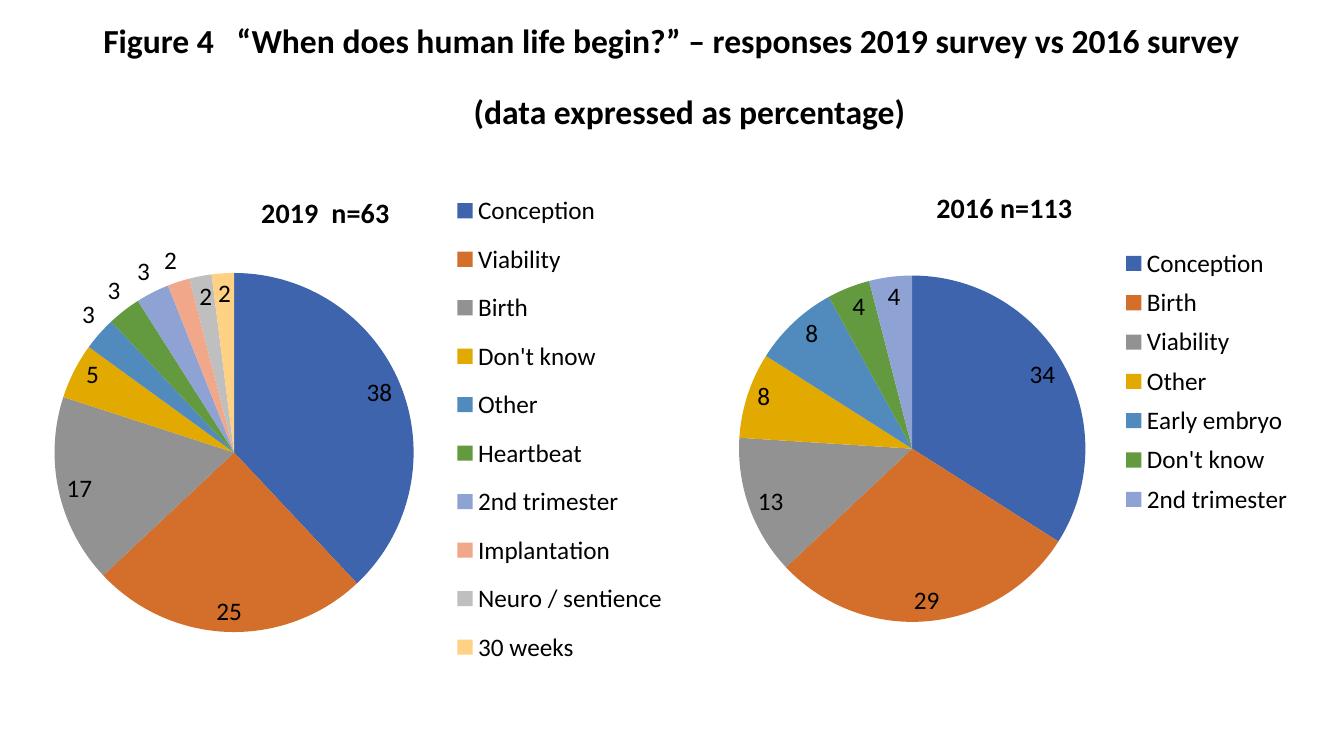
from lxml.etree import SubElement
from pptx import Presentation
from pptx.chart.data import CategoryChartData
from pptx.dml.color import RGBColor
from pptx.enum.chart import XL_CHART_TYPE, XL_LABEL_POSITION, XL_LEGEND_POSITION
from pptx.enum.text import MSO_ANCHOR, PP_ALIGN
from pptx.oxml.ns import qn
from pptx.util import Emu, Pt

COLORS = {
    "text": "000000",
    "blue": "3D64AC",
    "orange": "D36F2B",
    "gray": "929292",
    "gold": "E2AA00",
    "sky": "518BBE",
    "green": "639A3F",
    "lavender": "8FA2D4",
    "salmon": "F1A78A",
    "silver": "BFBFBF",
    "peach": "FFD184",
}
SLICES = ["blue", "orange", "gray", "gold", "sky", "green",
          "lavender", "salmon", "silver", "peach"]
EMU_PER_PX = 12192000 / 1344

RESPONSES_2019 = {
    "Conception": 38, "Viability": 25, "Birth": 17, "Don't know": 5, "Other": 3,
    "Heartbeat": 3, "2nd trimester": 3, "Implantation": 2,
    "Neuro / sentience": 2, "30 weeks": 2,
}
RESPONSES_2016 = {
    "Conception": 34, "Birth": 29, "Viability": 13, "Other": 8,
    "Early embryo": 8, "Don't know": 4, "2nd trimester": 4,
}


def px(length):
    return Emu(round(length * EMU_PER_PX))


def place(element, index, inner=False, **fractions):
    """Give a chart part a manual layout in fractions of the chart area."""
    for old_layout in element.findall(qn("c:layout")):
        element.remove(old_layout)
    layout = SubElement(element, qn("c:layout"))
    element.insert(index, layout)
    manual = SubElement(layout, qn("c:manualLayout"))
    settings = {"layoutTarget": "inner"} if inner else {}
    settings.update(xMode="edge", yMode="edge", **fractions)
    for name, value in settings.items():
        SubElement(manual, qn(f"c:{name}")).set("val", str(value))


class SurveySlide:
    """Holds the slide and its text style."""

    def __init__(self, presentation, font_name="Calibri"):
        self.slide = presentation.slides.add_slide(presentation.slide_layouts[6])
        self.font_name = font_name

    def style(self, font, size, bold=False):
        font.name = self.font_name
        font.size = Pt(size)
        font.bold = bold
        font.color.rgb = RGBColor.from_string(COLORS["text"])

    def heading(self, box, lines, gap, indent):
        """Centre the lines in the box, with later lines indented."""
        shape = self.slide.shapes.add_textbox(*map(px, box))
        frame = shape.text_frame
        frame.word_wrap = True
        frame.vertical_anchor = MSO_ANCHOR.MIDDLE
        for index, line in enumerate(lines):
            paragraph = frame.add_paragraph() if index else frame.paragraphs[0]
            paragraph.text = line
            paragraph.alignment = PP_ALIGN.CENTER
            paragraph.line_spacing = 0.9
            self.style(paragraph.font, 24, bold=True)
            if index:
                paragraph.space_before = Pt(gap)
                paragraph._p.get_or_add_pPr().set("marL", str(px(indent)))

    def pie(self, box, title, responses, plot, legend, title_place=None):
        data = CategoryChartData()
        data.categories = list(responses)
        data.add_series(title, list(responses.values()))
        chart = self.slide.shapes.add_chart(
            XL_CHART_TYPE.PIE, *map(px, box), data).chart
        self.style(chart.font, 18)

        chart.has_title = True
        paragraph = chart.chart_title.text_frame.paragraphs[0]
        paragraph.text = title
        self.style(paragraph.font, 20, bold=True)
        if title_place:
            place(chart.chart_title._element, 1, **title_place)

        chart.has_legend = True
        chart.legend.position = XL_LEGEND_POSITION.RIGHT
        chart.legend.include_in_layout = False
        place(chart.legend._element, 1, **legend)
        place(chart._chartSpace.chart.plotArea, 0, inner=True, **plot)

        pie_plot = chart.plots[0]
        pie_plot.vary_by_categories = True
        for index, color in enumerate(SLICES[:len(responses)]):
            fill = pie_plot.series[0].points[index].format.fill
            fill.solid()
            fill.fore_color.rgb = RGBColor.from_string(COLORS[color])
        pie_plot.has_data_labels = True
        labels = pie_plot.data_labels
        labels.show_value = True
        labels.show_percentage = False
        labels.position = XL_LABEL_POSITION.BEST_FIT
        self.style(labels.font, 18)


def main():
    presentation = Presentation()
    presentation.slide_width, presentation.slide_height = px(1344), px(756)
    survey = SurveySlide(presentation)
    survey.heading(
        (92, 26, 1159, 104),
        ["Figure 4   “When does human life begin?” – responses 2019 survey vs 2016 survey",
         "(data expressed as percentage)"],
        gap=25, indent=36)
    survey.pie(
        (42, 167, 630, 524), "2019  n=63", RESPONSES_2019,
        plot=dict(x=0.02, y=0.2, w=0.57, h=0.69),
        legend=dict(x=0.65, y=0.02, w=0.35, h=0.96),
        title_place=dict(x=0.34, y=0.04))
    survey.pie(
        (707, 167, 595, 517), "2016 n=113", RESPONSES_2016,
        plot=dict(x=0.05, y=0.21, w=0.59, h=0.67),
        legend=dict(x=0.69, y=0.14, w=0.3, h=0.55))
    presentation.save("out.pptx")


if __name__ == "__main__":
    main()
